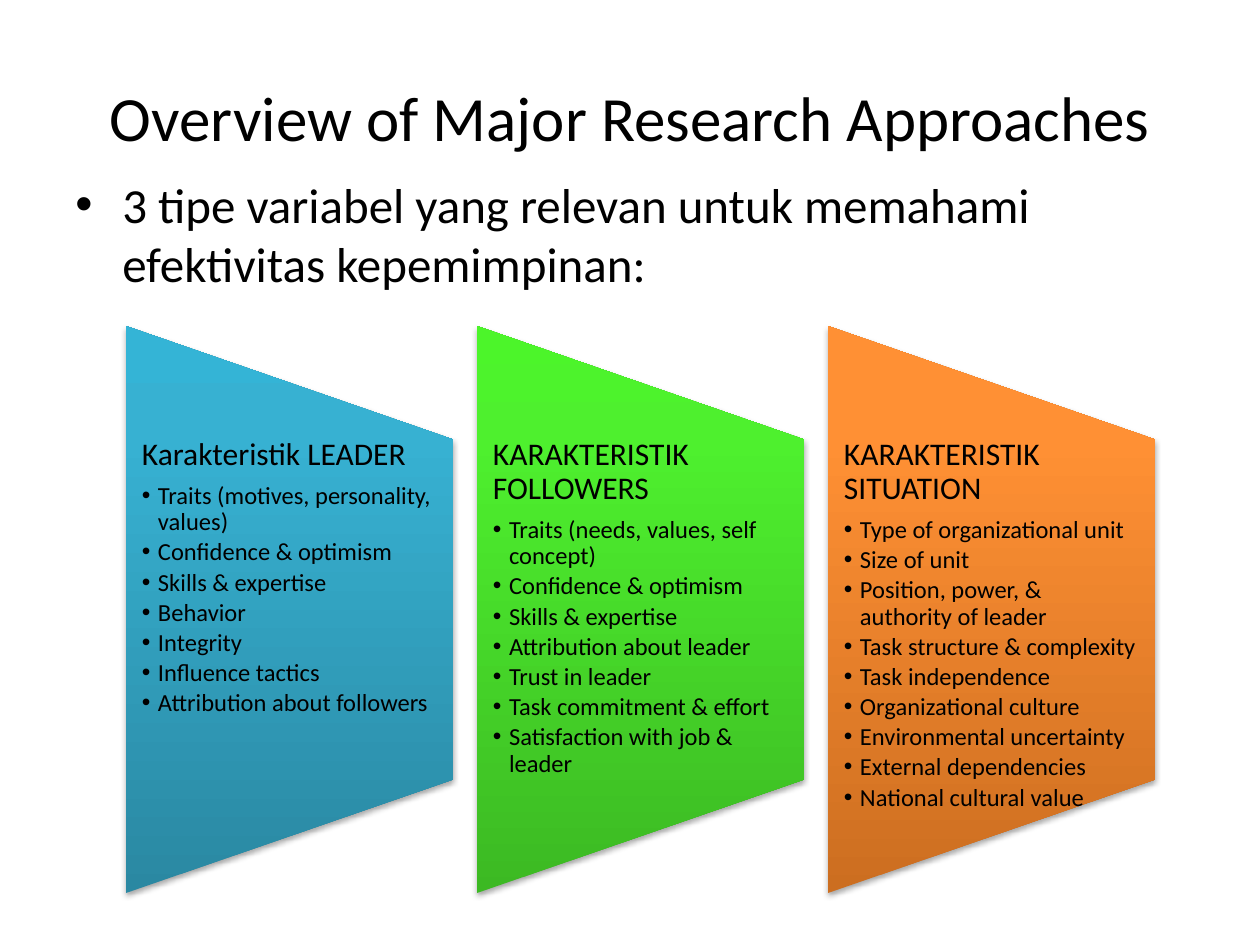
from dataclasses import dataclass

from pptx import Presentation
from pptx.dml.color import RGBColor
from pptx.enum.shapes import MSO_SHAPE
from pptx.enum.text import MSO_ANCHOR, PP_ALIGN
from pptx.oxml import parse_xml
from pptx.oxml.ns import nsdecls
from pptx.util import Emu, Pt

PX_PER_INCH = 126
EMU_PER_INCH = 914400

TRAPEZOID = MSO_SHAPE.FLOWCHART_MANUAL_OPERATION
TOP, MIDDLE = MSO_ANCHOR.TOP, MSO_ANCHOR.MIDDLE
LEFT, CENTER = PP_ALIGN.LEFT, PP_ALIGN.CENTER

BLACK = RGBColor(0x00, 0x00, 0x00)
BLUE_DARK = RGBColor(0x2A, 0x88, 0xA2)
BLUE_MID = RGBColor(0x37, 0xB1, 0xD2)
BLUE_LIGHT = RGBColor(0x34, 0xB4, 0xD6)
GREEN_DARK = RGBColor(0x3C, 0xB9, 0x23)
GREEN_MID = RGBColor(0x4E, 0xF0, 0x2E)
GREEN_LIGHT = RGBColor(0x4C, 0xF5, 0x2A)
ORANGE_DARK = RGBColor(0xCC, 0x6E, 0x20)
ORANGE_MID = RGBColor(0xFF, 0x90, 0x34)
ORANGE_LIGHT = RGBColor(0xFF, 0x91, 0x36)

PANEL_LEFT, PANEL_PITCH, PANEL_MIDDLE = 126, 351, 609
PANEL_WIDTH, PANEL_HEIGHT = 327, 567
PANEL_TEXT_TOP, PANEL_TEXT_HEIGHT, PANEL_INSET = 438, 340, 16
GRADIENT_POSITIONS = (0, 80, 100)


@dataclass(frozen=True)
class Box:
    left: int
    top: int
    width: int
    height: int


@dataclass(frozen=True)
class TextStyle:
    size: int
    align: PP_ALIGN = LEFT
    indent: int = 0
    level: int = 0
    line_spacing: float = 1.0
    before: float = 0
    after: float = 0


@dataclass(frozen=True)
class Panel:
    heading: str
    points: tuple[str, ...]
    colors: tuple[RGBColor, RGBColor, RGBColor]


TITLE_STYLE = TextStyle(36, align=CENTER)
INTRO_STYLE = TextStyle(28, indent=47, before=5.6)
HEADING_STYLE = TextStyle(18, line_spacing=0.9, after=6.3)
POINT_STYLE = TextStyle(14, indent=16, level=1, line_spacing=0.9, after=2.1)

PANELS = (
    Panel(
        "Karakteristik LEADER",
        (
            "Traits (motives, personality, values)",
            "Confidence & optimism",
            "Skills & expertise",
            "Behavior",
            "Integrity",
            "Influence tactics",
            "Attribution about followers",
        ),
        (BLUE_DARK, BLUE_MID, BLUE_LIGHT),
    ),
    Panel(
        "KARAKTERISTIK FOLLOWERS",
        (
            "Traits (needs, values, self concept)",
            "Confidence & optimism",
            "Skills & expertise",
            "Attribution about leader",
            "Trust in leader",
            "Task commitment & effort",
            "Satisfaction with job & leader",
        ),
        (GREEN_DARK, GREEN_MID, GREEN_LIGHT),
    ),
    Panel(
        "KARAKTERISTIK SITUATION",
        (
            "Type of organizational unit",
            "Size of unit",
            "Position, power, & authority of leader",
            "Task structure & complexity",
            "Task independence",
            "Organizational culture",
            "Environmental uncertainty",
            "External dependencies",
            "National cultural value",
        ),
        (ORANGE_DARK, ORANGE_MID, ORANGE_LIGHT),
    ),
)


def px(length: int) -> Emu:
    return Emu(round(length * EMU_PER_INCH / PX_PER_INCH))


def place(box: Box) -> tuple[Emu, ...]:
    return tuple(px(n) for n in (box.left, box.top, box.width, box.height))


def set_format(target, values: dict) -> None:
    for attribute, value in values.items():
        setattr(target, attribute, value)


def add_text(slide, box: Box, lines: list[tuple[str, TextStyle]], **frame_format) -> None:
    frame = slide.shapes.add_textbox(*place(box)).text_frame
    set_format(frame, {"word_wrap": True, "vertical_anchor": TOP, **frame_format})
    for index, (text, style) in enumerate(lines):
        paragraph = frame.add_paragraph() if index else frame.paragraphs[0]
        set_format(paragraph, {
            "alignment": style.align,
            "level": style.level,
            "line_spacing": style.line_spacing,
            "space_before": Pt(style.before),
            "space_after": Pt(style.after),
        })
        if style.indent:
            properties = paragraph._p.get_or_add_pPr()
            properties.set("marL", str(px(style.indent)))
            properties.set("indent", str(-px(style.indent)))
            properties.append(parse_xml(f'<a:buFont {nsdecls("a")} typeface="Arial"/>'))
            properties.append(parse_xml(f'<a:buChar {nsdecls("a")} char="•"/>'))
        run = paragraph.add_run()
        run.text = text
        set_format(run.font, {"name": "Calibri", "size": Pt(style.size)})
        run.font.color.rgb = BLACK


def add_trapezoid(slide, left: int, colors: tuple[RGBColor, ...]) -> None:
    box = Box(
        left + (PANEL_WIDTH - PANEL_HEIGHT) // 2,
        PANEL_MIDDLE - PANEL_WIDTH // 2,
        PANEL_HEIGHT,
        PANEL_WIDTH,
    )
    trapezoid = slide.shapes.add_shape(TRAPEZOID, *place(box))
    trapezoid.rotation = 270
    trapezoid.line.fill.background()
    trapezoid.shadow.inherit = False
    stops = "".join(
        f'<a:gs pos="{position * 1000}"><a:srgbClr val="{color}"/></a:gs>'
        for position, color in zip(GRADIENT_POSITIONS, colors)
    )
    properties = trapezoid._element.spPr
    properties.insert(2, parse_xml(
        f'<a:gradFill {nsdecls("a")} rotWithShape="0"><a:gsLst>{stops}</a:gsLst>'
        '<a:lin ang="16200000" scaled="0"/></a:gradFill>'
    ))
    properties[-1].append(parse_xml(
        f'<a:outerShdw {nsdecls("a")} blurRad="40000" dist="23000" dir="5400000" '
        f'rotWithShape="0"><a:srgbClr val="{BLACK}"><a:alpha val="35000"/></a:srgbClr>'
        '</a:outerShdw>'
    ))


def add_panel(slide, left: int, panel: Panel) -> None:
    add_trapezoid(slide, left, panel.colors)
    lines = [(panel.heading, HEADING_STYLE)]
    lines += [(point, POINT_STYLE) for point in panel.points]
    add_text(
        slide, Box(left, PANEL_TEXT_TOP, PANEL_WIDTH, PANEL_TEXT_HEIGHT), lines,
        margin_left=px(PANEL_INSET), margin_right=px(PANEL_INSET),
        margin_top=0, margin_bottom=0,
    )


def main() -> None:
    presentation = Presentation()
    set_format(presentation, {"slide_width": px(1260), "slide_height": px(945)})
    slide = presentation.slides.add_slide(presentation.slide_layouts[6])
    add_text(
        slide, Box(63, 38, 1134, 157),
        [("Overview of Major Research Approaches", TITLE_STYLE)],
        vertical_anchor=MIDDLE,
    )
    add_text(
        slide, Box(63, 168, 1134, 677),
        [("3 tipe variabel yang relevan untuk memahami efektivitas kepemimpinan:", INTRO_STYLE)],
    )
    for index, panel in enumerate(PANELS):
        add_panel(slide, PANEL_LEFT + index * PANEL_PITCH, panel)
    presentation.save("out.pptx")


if __name__ == "__main__":
    main()
